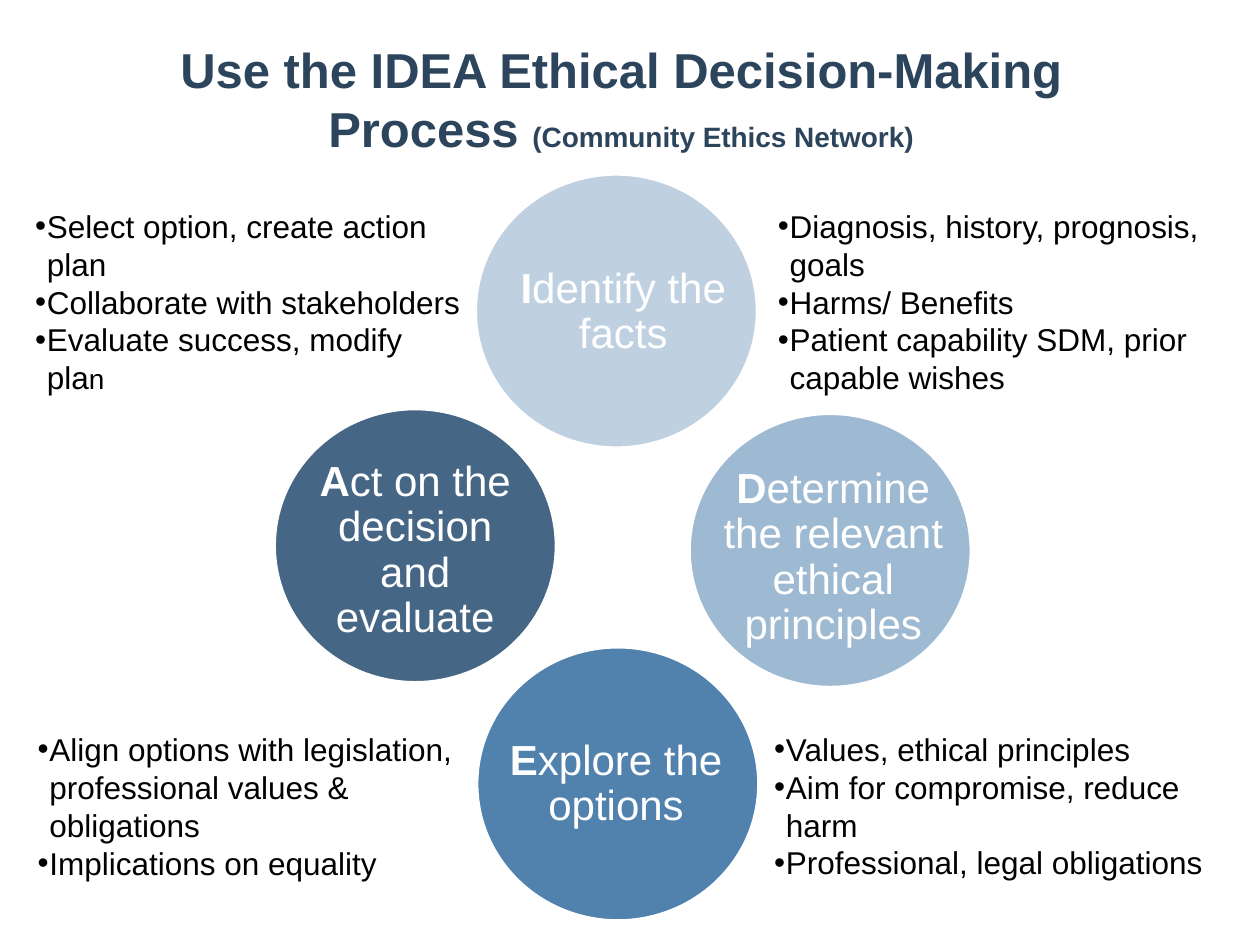
from lxml.etree import SubElement as Sub
from pptx import Presentation as Deck
from pptx.dml.color import RGBColor as Color
from pptx.enum.shapes import MSO_SHAPE as Kind
from pptx.enum.text import MSO_ANCHOR as Anchor, PP_ALIGN as Align
from pptx.oxml.ns import qn
from pptx.util import Pt

FACE = "Arial"
WHITE, BLACK, NAVY = "FFFFFF", "000000", "2C455D"
DISC = 161.3, 156.7
LABEL = 137.5, 123.8

STEPS = [
    ("I", "dentify the facts", "BFD0E1", (271.6, 99.4), (287.4, 116.6)),
    ("D", "etermine the relevant ethical principles", "9EB9D2",
     (393.8, 236.2), (407.4, 256.8)),
    ("E", "xplore the options", "5181AD", (272.4, 369.6), (283.3, 386.2)),
    ("A", "ct on the decision and evaluate", "466685",
     (156.7, 233.5), (168.5, 252.8)),
]

NOTES = [
    ((13, 114.7, 259.2, 116.6),
     [["Select option, create action plan"],
      ["Collaborate with stakeholders"],
      ["Evaluate success, modify pla", "n"]]),
    ((437.4, 114.7, 270.7, 116.6),
     [["Diagnosis, history, prognosis, goals"],
      ["Harms/ Benefits"],
      ["Patient capability SDM, prior capable wishes"]]),
    ((14.4, 413.7, 271.4, 94.3),
     [["Align options with legislation, professional values & obligations"],
      ["Implications on equality"]]),
    ((435.3, 413.6, 269.3, 94.3),
     [["Values, ethical principles"],
      ["Aim for compromise, reduce harm"],
      ["Professional, legal obligations"]]),
]


def paint(hue):
    return Color.from_string(hue)


def style(para, size, hue, bold=None):
    font = para.font
    font.name, font.size, font.bold = FACE, Pt(size), bold
    font.color.rgb = paint(hue)


def add_run(para, text):
    run = para.add_run()
    run.text = text
    return run


def add_box(slide, area):
    frame = slide.shapes.add_textbox(*map(Pt, area)).text_frame
    frame.word_wrap = True
    return frame


def add_title(slide):
    para = add_box(slide, (84.6, 19.1, 540.7, 74.9)).paragraphs[0]
    para.alignment = Align.CENTER
    style(para, 28, NAVY, True)
    add_run(para, "Use the IDEA Ethical Decision-Making Process ")
    add_run(para, "(Community Ethics Network)").font.size = Pt(16)


def add_disc(slide, spot, hue):
    disc = slide.shapes.add_shape(Kind.OVAL, *map(Pt, spot + DISC))
    disc.shadow.inherit = False
    disc.fill.solid()
    disc.fill.fore_color.rgb = paint(hue)
    disc.line.color.rgb = paint(WHITE)
    disc.line.width = Pt(2)


def add_label(slide, spot, head, rest):
    frame = add_box(slide, spot + LABEL)
    frame.vertical_anchor = Anchor.MIDDLE
    frame.margin_left = frame.margin_right = Pt(1.5)
    frame.margin_top = frame.margin_bottom = Pt(1.5)
    para = frame.paragraphs[0]
    para.alignment = Align.CENTER
    para.line_spacing = 0.9
    style(para, 24, WHITE)
    add_run(para, head).font.bold = True
    add_run(para, rest)


def add_bullet(para):
    props = para._p.get_or_add_pPr()
    props.set("marL", str(Pt(6.75)))
    props.set("indent", str(-Pt(6.75)))
    face = Sub(props, qn("a:buFont"), typeface=FACE)
    mark = Sub(props, qn("a:buChar"), char="•")
    font = props.find(qn("a:defRPr"))
    font.addprevious(face)
    font.addprevious(mark)


def add_notes(slide, area, items):
    frame = add_box(slide, area)
    for i, (text, *tail) in enumerate(items):
        para = frame.add_paragraph() if i else frame.paragraphs[0]
        style(para, 18, BLACK)
        add_bullet(para)
        add_run(para, text)
        for end in tail:
            add_run(para, end).font.size = Pt(16)


def main():
    deck = Deck()
    deck.slide_width, deck.slide_height = Pt(720), Pt(540)
    slide = deck.slides.add_slide(deck.slide_layouts[6])
    add_title(slide)
    for head, rest, hue, spot, place in STEPS:
        add_disc(slide, spot, hue)
        add_label(slide, place, head, rest)
    for area, items in NOTES:
        add_notes(slide, area, items)
    deck.save("out.pptx")


if __name__ == "__main__":
    main()
